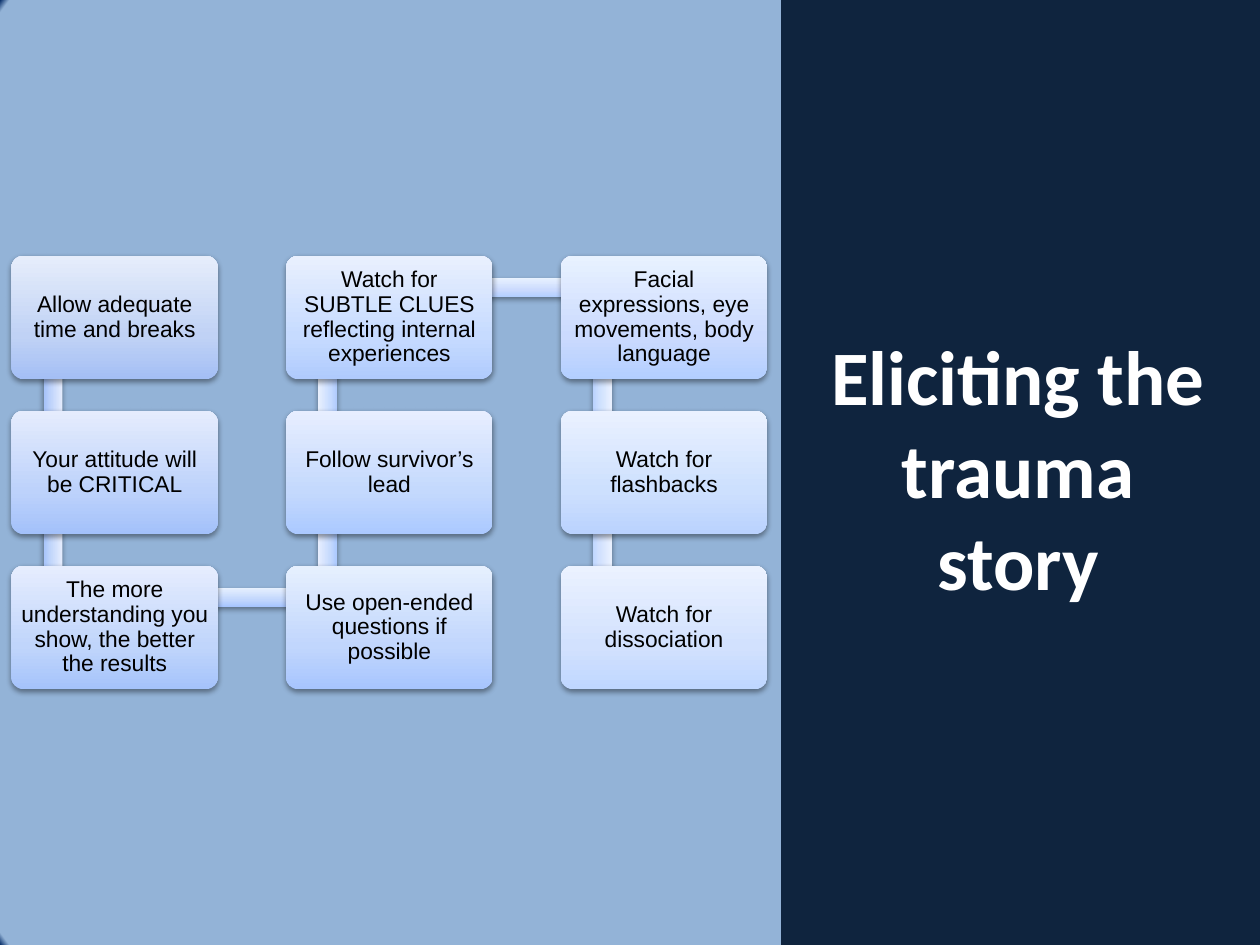
import pptx
import pptx.util
import pptx.dml.color
import pptx.enum.shapes
import pptx.enum.text
import pptx.oxml
import pptx.oxml.ns

Inches = pptx.util.Inches
RGBColor = pptx.dml.color.RGBColor
MSO_SHAPE = pptx.enum.shapes.MSO_SHAPE

NAVY = RGBColor(0x0F, 0x24, 0x3E)
WHITE = RGBColor(0xFF, 0xFF, 0xFF)
BLACK = RGBColor(0x00, 0x00, 0x00)
BACKGROUND = ((0, RGBColor(0x93, 0xB3, 0xD7)), (99, RGBColor(0x93, 0xB3, 0xD7)),
              (100, RGBColor(0x00, 0x27, 0x63)))
NAMESPACE = pptx.oxml.ns.nsdecls("a")
UPWARD = '<a:lin ang="16200000" scaled="0"/>'
FROM_CENTRE = ('<a:path path="circle"><a:fillToRect l="50000" t="50000" '
               'r="50000" b="50000"/></a:path>')

# Steps in reading order: text, column, row, gradient from bottom to top
STEPS = [
    ("Allow adequate time and breaks", 0, 0, "A4BFF5", "C0D2F5", "E6EDFB"),
    ("Your attitude will be CRITICAL", 0, 1, "A3C1FA", "BDD2FB", "E5ECFD"),
    ("The more understanding you show, the better the results", 0, 2,
     "A5C3FB", "C0D5FB", "E6EDFE"),
    ("Use open-ended questions if possible", 1, 2, "A7C5FE", "C1D6FD", "E6F0FE"),
    ("Follow survivor’s lead", 1, 1, "ABC9FF", "C4D9FD", "E7EEFF"),
    ("Watch for SUBTLE CLUES reflecting internal experiences", 1, 0,
     "B0CBFD", "C6DBFF", "E9F0FE"),
    ("Facial expressions, eye movements, body language", 2, 0,
     "B3CFFF", "CBDAFE", "E8F2FF"),
    ("Watch for flashbacks", 2, 1, "BAD2FE", "CDE0FE", "EAF1FF"),
    ("Watch for dissociation", 2, 2, "BFD7FF", "D2E1FE", "EBF2FF"),
]
GRID_LEFT, GRID_TOP = 0.09, 2.03
BOX_WIDTH, BOX_HEIGHT = 1.64, 0.98
COLUMN_PITCH, ROW_PITCH = 2.18, 1.23
NODE_X, NODE_Y = 0.33, 0.25  # where the bars meet, measured from a box corner
BAR_THICKNESS = 0.15


def gradient_fill(stops, direction):
    marks = "".join(f'<a:gs pos="{position * 1000}"><a:srgbClr val="{color}"/></a:gs>'
                    for position, color in stops)
    return pptx.oxml.parse_xml(f'<a:gradFill {NAMESPACE} rotWithShape="1">'
                               f'<a:gsLst>{marks}</a:gsLst>{direction}</a:gradFill>')


def add_glossy(kind, left, top, width, height, colors):
    shape = slide.shapes.add_shape(kind, Inches(left), Inches(top),
                                   Inches(width), Inches(height))
    properties = shape.element.spPr
    properties.append(gradient_fill(zip((0, 35, 100), colors), UPWARD))
    shape.line.fill.background()
    properties.append(pptx.oxml.parse_xml(
        f'<a:effectLst {NAMESPACE}><a:outerShdw blurRad="40000" dist="20000" '
        'dir="5400000" rotWithShape="0"><a:srgbClr val="000000">'
        '<a:alpha val="38000"/></a:srgbClr></a:outerShdw></a:effectLst>'))
    return shape


deck = pptx.Presentation()
deck.slide_width, deck.slide_height = Inches(10), Inches(7.5)
slide = deck.slides.add_slide(deck.slide_layouts[6])

# Radial background
slide.background.fill.solid()
plain = slide.element.find(".//" + pptx.oxml.ns.qn("a:solidFill"))
plain.getparent().replace(plain, gradient_fill(BACKGROUND, FROM_CENTRE))

# Dark panel with the title
panel = slide.shapes.add_shape(MSO_SHAPE.RECTANGLE, Inches(6.2), 0,
                               Inches(3.8), Inches(7.5))
panel.shadow.inherit = False
panel.fill.solid()
panel.fill.fore_color.rgb = NAVY
panel.line.fill.background()

title = slide.shapes.add_textbox(Inches(6.42), Inches(0.7), Inches(3.32), Inches(6.02))
title.text_frame.word_wrap = True
title.text_frame.vertical_anchor = pptx.enum.text.MSO_ANCHOR.MIDDLE
title.text_frame.text = "Eliciting the trauma story"
para = title.text_frame.paragraphs[0]
para.alignment = pptx.enum.text.PP_ALIGN.CENTER
span = para.runs[0]
span.font.name, span.font.size, span.font.bold = "Calibri", pptx.util.Pt(44), True
span.font.color.rgb = WHITE

# Snaking process: each bar lies behind the two boxes it joins
for index, (text, column, row, *colors) in enumerate(STEPS):
    left = GRID_LEFT + column * COLUMN_PITCH
    top = GRID_TOP + row * ROW_PITCH

    if index + 1 < len(STEPS):
        _, next_column, next_row, *next_colors = STEPS[index + 1]
        across, down = next_column - column, next_row - row
        length = COLUMN_PITCH if across else ROW_PITCH
        centre_x = left + NODE_X + across * COLUMN_PITCH / 2
        centre_y = top + NODE_Y + down * ROW_PITCH / 2
        bar = add_glossy(MSO_SHAPE.RECTANGLE, centre_x - length / 2,
                         centre_y - BAR_THICKNESS / 2, length, BAR_THICKNESS, next_colors)
        bar.rotation = 90 * down % 360

    box = add_glossy(MSO_SHAPE.ROUNDED_RECTANGLE, left, top, BOX_WIDTH, BOX_HEIGHT, colors)
    box.adjustments[0] = 0.1
    frame = box.text_frame
    frame.margin_left = frame.margin_right = Inches(0.05)
    frame.margin_top = frame.margin_bottom = Inches(0.05)
    frame.word_wrap = True
    frame.vertical_anchor = pptx.enum.text.MSO_ANCHOR.MIDDLE
    frame.text = text
    para = frame.paragraphs[0]
    para.alignment = pptx.enum.text.PP_ALIGN.CENTER
    para.line_spacing = 0.9
    span = para.runs[0]
    span.font.name, span.font.size = "Arial", pptx.util.Pt(13)
    span.font.color.rgb = BLACK

deck.save("out.pptx")
